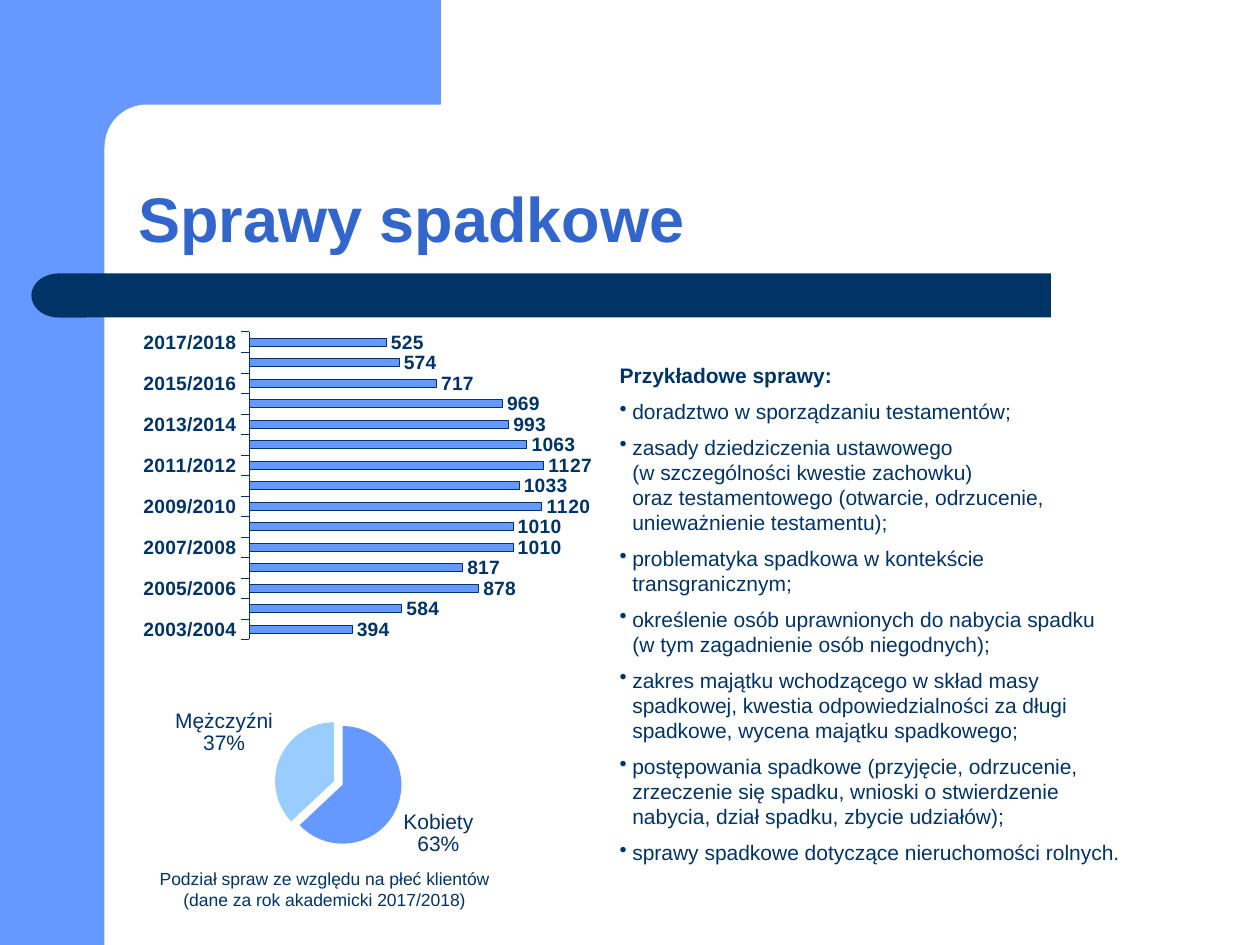
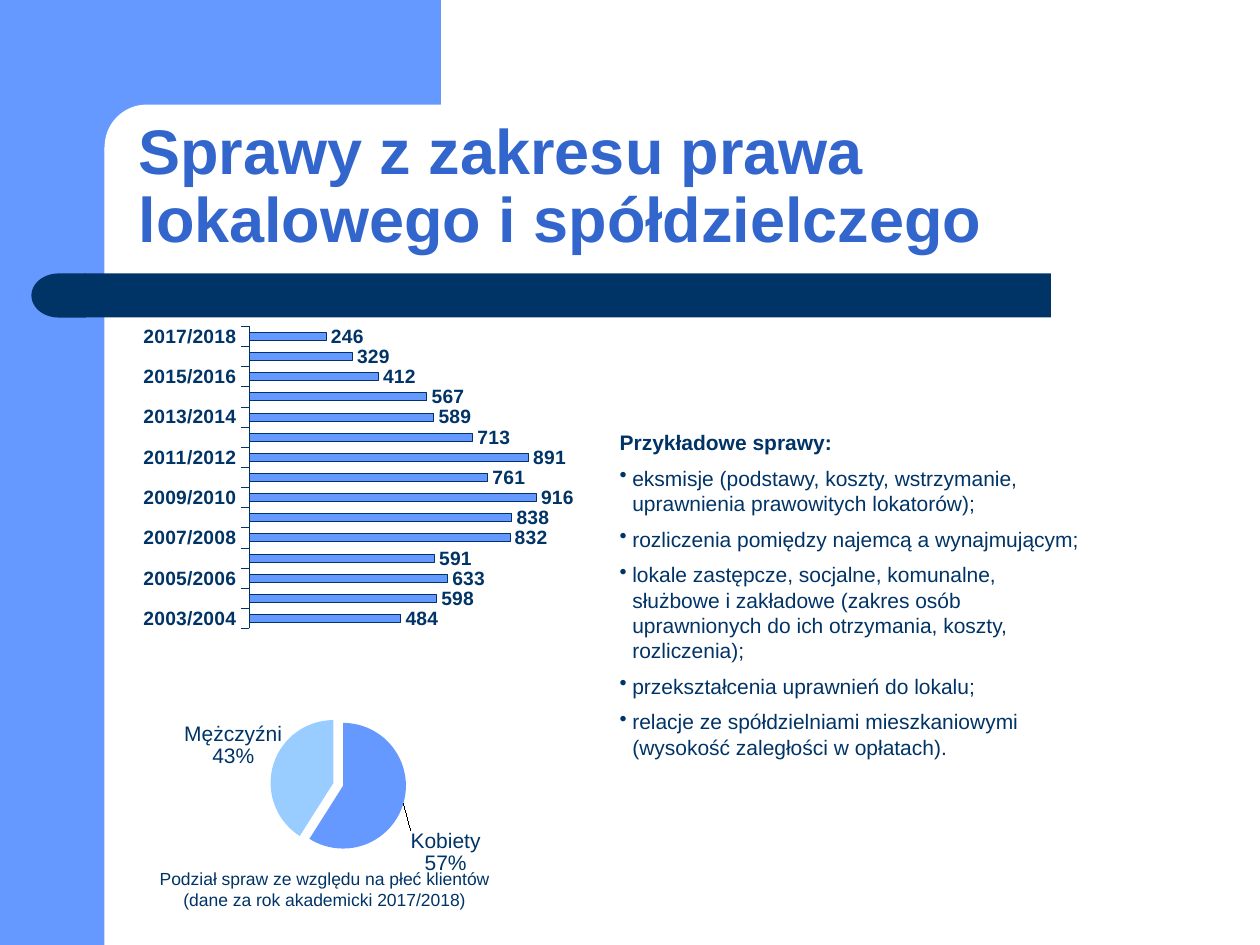
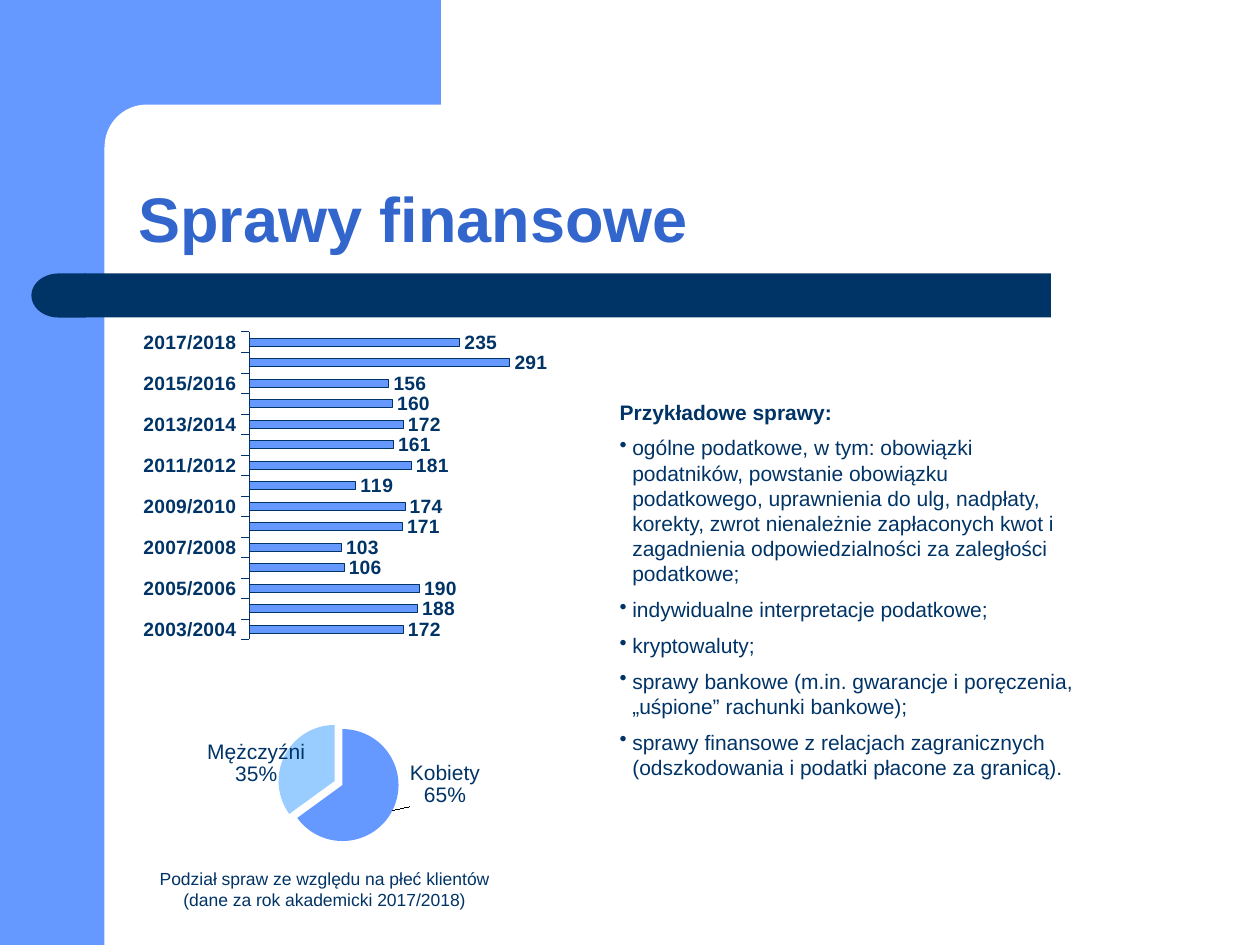
from lxml import etree
from pptx import Presentation
from pptx.chart.data import CategoryChartData
from pptx.dml.color import RGBColor
from pptx.enum.chart import XL_CHART_TYPE, XL_LABEL_POSITION, XL_TICK_MARK
from pptx.enum.shapes import MSO_SHAPE
from pptx.enum.text import MSO_ANCHOR, MSO_AUTO_SIZE, PP_ALIGN
from pptx.oxml import parse_xml
from pptx.oxml.ns import nsdecls, qn
from pptx.util import Pt

# Style
PX = 9144  # EMU per px, 100 px to the inch
FONT = "Arial"
NAVY = RGBColor(0x00, 0x33, 0x66)
BLUE = RGBColor(0x66, 0x99, 0xFF)
SKY = RGBColor(0x99, 0xCC, 0xFF)
TITLE = RGBColor(0x33, 0x66, 0xCC)
WHITE = RGBColor(0xFF, 0xFF, 0xFF)

RECT = MSO_SHAPE.RECTANGLE
ROUND = MSO_SHAPE.ROUNDED_RECTANGLE
DELAY = MSO_SHAPE.FLOWCHART_DELAY
BAR = XL_CHART_TYPE.BAR_CLUSTERED
PIE = XL_CHART_TYPE.PIE
OUT_END = XL_LABEL_POSITION.OUTSIDE_END
TICK_OUT = XL_TICK_MARK.OUTSIDE
LEFT, CENTER = PP_ALIGN.LEFT, PP_ALIGN.CENTER
BOTTOM = MSO_ANCHOR.BOTTOM
GROW, FIXED = MSO_AUTO_SIZE.SHAPE_TO_FIT_TEXT, MSO_AUTO_SIZE.NONE

# Shared wording and chart settings
YEARS = [f"{y}/{y + 1}" for y in range(2003, 2018)]
SEXES = ["Kobiety", "Mężczyźni"]
HEADING = "Przykładowe sprawy:"
CAPTION = "Podział spraw ze względu na płeć klientów (dane za rok akademicki 2017/2018)"
BAR_PLOT = (0.283, 0.078, 0.575, 0.857)
PIE_W, PIE_H = 433, 165

# labels: slice label texts that differ from the data; shifts: label offsets
TOPICS = [
    dict(
        title="Sprawy spadkowe",
        cases=[394, 584, 878, 817, 1010, 1010, 1120, 1033, 1127, 1063, 993, 969, 717, 574, 525],
        axis_max=1200, bars_at=(75, 241, 433, 285),
        shares=[63, 37], pie_top=539, pie_size=101, labels=None, shifts=None,
        text_at=(482, 283, 428, 424),
        examples=[
            "doradztwo w sporządzaniu testamentów;",
            "zasady dziedziczenia ustawowego \n(w szczególności kwestie zachowku) \n"
            "oraz testamentowego (otwarcie, odrzucenie, unieważnienie testamentu);",
            "problematyka spadkowa w kontekście transgranicznym;",
            "określenie osób uprawnionych do nabycia spadku \n(w tym zagadnienie osób niegodnych);",
            "zakres majątku wchodzącego w skład masy spadkowej, kwestia odpowiedzialności "
            "za długi spadkowe, wycena majątku spadkowego;",
            "postępowania spadkowe (przyjęcie, odrzucenie, zrzeczenie się spadku, wnioski "
            "o stwierdzenie nabycia, dział spadku, zbycie udziałów);",
            "sprawy spadkowe dotyczące nieruchomości rolnych.",
        ],
    ),
    dict(
        title="Sprawy z zakresu prawa lokalowego i spółdzielczego",
        cases=[484, 598, 633, 591, 832, 838, 916, 761, 891, 713, 589, 567, 412, 329, 246],
        axis_max=1000, bars_at=(75, 237, 433, 280),
        shares=[59, 41], pie_top=540, pie_size=108,
        labels=["57%", "43%"], shifts=[(0, 0.12), (0.03, 0.02)],
        text_at=(482, 336, 388, 283),
        examples=[
            "eksmisje (podstawy, koszty, wstrzymanie, uprawnienia prawowitych lokatorów);",
            "rozliczenia pomiędzy najemcą a wynajmującym;",
            "lokale zastępcze, socjalne, komunalne, służbowe i zakładowe (zakres osób "
            "uprawnionych do ich otrzymania, koszty, rozliczenia);",
            "przekształcenia uprawnień do lokalu;",
            "relacje ze spółdzielniami mieszkaniowymi (wysokość zaległości w opłatach).",
        ],
    ),
    dict(
        title="Sprawy finansowe",
        cases=[172, 188, 190, 106, 103, 171, 174, 119, 181, 161, 172, 160, 156, 291, 235],
        axis_max=350, bars_at=(75, 241, 433, 285),
        shares=[65, 35], pie_top=539, pie_size=96,
        labels=None, shifts=[(0.02, -0.25), (0.05, 0.16)],
        text_at=(482, 312, 388, 333),
        examples=[
            "ogólne podatkowe, w tym: obowiązki podatników, powstanie obowiązku podatkowego, "
            "uprawnienia do ulg, nadpłaty, korekty, zwrot nienależnie zapłaconych kwot "
            "i zagadnienia odpowiedzialności za zaległości podatkowe;",
            "indywidualne interpretacje podatkowe;",
            "kryptowaluty;",
            "sprawy bankowe (m.in. gwarancje i poręczenia, „uśpione” rachunki bankowe);",
            "sprawy finansowe z relacjach zagranicznych (odszkodowania i podatki płacone za granicą).",
        ],
    ),
]


def emu(box):
    return [v * PX for v in box]


def set_font(font, size, color=NAVY, bold=False):
    font.name, font.size, font.bold = FONT, Pt(size), bold
    font.color.rgb = color


def manual_layout(x, y, w=None, h=None):
    """Chart layout: a plot box when w and h are given, else a label offset."""
    fields = [("x", x), ("y", y)]
    if w is not None:
        fields = [("layoutTarget", "inner"), ("xMode", "edge"), ("yMode", "edge"),
                  *fields, ("w", w), ("h", h)]
    body = "".join(f'<c:{name} val="{value}"/>' for name, value in fields)
    return parse_xml(f'<c:layout {nsdecls("c")}><c:manualLayout>{body}</c:manualLayout></c:layout>')


class Deck:
    def __init__(self):
        self.prs = Presentation()
        self.prs.slide_width, self.prs.slide_height = 1000 * PX, 750 * PX
        self.layout = self.prs.slide_layouts[5]
        self.s = None

    def new_slide(self, title):
        self.s = self.prs.slides.add_slide(self.layout)
        sp = self.s.shapes.title
        sp.left, sp.top, sp.width, sp.height = emu((100, 83, 875, 125))
        tf = sp.text_frame
        tf.word_wrap, tf.auto_size, tf.vertical_anchor = True, FIXED, BOTTOM
        p = tf.paragraphs[0]
        p.alignment, p.line_spacing = LEFT, 0.9
        self.run(p, title, 36, TITLE, True)

    def run(self, p, text, size, color=NAVY, bold=False):
        for i, line in enumerate(text.split("\n")):
            if i:
                p.add_line_break()
            r = p.add_run()
            r.text = line
            set_font(r.font, size, color, bold)

    def layout_shape(self, kind, box, color, adj=None, flip=False):
        """Draw a shape and hand it to the layout that all slides share."""
        sp = self.s.shapes.add_shape(kind, *emu(box))
        sp.shadow.inherit = False
        sp.fill.solid()
        sp.fill.fore_color.rgb = color
        sp.line.fill.background()
        if adj is not None:
            sp.adjustments[0] = adj
        if flip:
            sp.element.xpath(".//a:xfrm")[0].set("flipH", "1")
        self.layout.shapes.element.append(sp.element)

    def text_box(self, box):
        tf = self.s.shapes.add_textbox(*emu(box)).text_frame
        tf.word_wrap, tf.auto_size = True, GROW
        return tf

    def bullet(self, tf, text):
        p = tf.add_paragraph()
        p.space_before = Pt(6)
        pPr = p._p.get_or_add_pPr()
        pPr.set("marL", str(10 * PX))
        pPr.set("indent", str(-10 * PX))
        etree.SubElement(pPr, qn("a:buChar")).set("char", "•")
        self.run(p, text, 12)

    def chart(self, kind, box, cats, values, plot_box):
        data = CategoryChartData()
        data.categories = cats
        data.add_series("Series 1", values)
        chart = self.s.shapes.add_chart(kind, *emu(box), data).chart
        chart.has_title = chart.has_legend = False
        set_font(chart.font, 12)
        for old in chart.element.xpath(".//c:plotArea/c:layout"):
            old.getparent().remove(old)
        chart.element.xpath(".//c:plotArea")[0].insert(0, manual_layout(*plot_box))
        chart.element.xpath("./c:chart")[0].addnext(parse_xml(
            f'<c:spPr {nsdecls("c", "a")}><a:noFill/><a:ln><a:noFill/></a:ln></c:spPr>'))
        return chart

    def bars(self, box, values, axis_max):
        chart = self.chart(BAR, box, YEARS, values, BAR_PLOT)
        axis = chart.value_axis
        axis.visible = axis.has_major_gridlines = False
        axis.minimum_scale, axis.maximum_scale = 0, axis_max
        axis = chart.category_axis
        axis.major_tick_mark = TICK_OUT
        axis.format.line.color.rgb = NAVY
        axis.format.line.width = Pt(0.15)
        set_font(axis.tick_labels.font, 11, bold=True)
        plot = chart.plots[0]
        plot.gap_width, plot.vary_by_categories = 150, False
        series = plot.series[0]
        series.format.fill.solid()
        series.format.fill.fore_color.rgb = BLUE
        series.format.line.color.rgb = NAVY
        series.format.line.width = Pt(0.25)
        labels = series.data_labels
        labels.show_value, labels.position = True, OUT_END
        set_font(labels.font, 11, bold=True)

    def pie(self, top, shares, size, texts, shifts):
        w, h = size / PIE_W, size / PIE_H
        plot_box = [round(v, 3) for v in (0.526 - w / 2, 0.5 - h / 2, w, h)]
        chart = self.chart(PIE, (41, top, PIE_W, PIE_H), SEXES, shares, plot_box)
        chart.plots[0].vary_by_categories = True
        series = chart.plots[0].series[0]
        labels = series.data_labels
        labels.show_value = False
        labels.show_category_name = labels.show_percentage = True
        labels.position = OUT_END
        set_font(labels.font, 12)
        for i, color in enumerate((BLUE, SKY)):
            point = series.points[i]
            point.format.fill.solid()
            point.format.fill.fore_color.rgb = color
            if texts:
                tf = point.data_label.text_frame
                self.run(tf.paragraphs[0], SEXES[i], 12)
                self.run(tf.add_paragraph(), texts[i], 12)
            elif shifts:
                set_font(point.data_label.font, 12)
            if shifts:
                point.data_label.position = OUT_END
                label = chart.element.xpath(f".//c:dLbl[c:idx/@val='{i}']")[0]
                label.insert(1, manual_layout(*shifts[i]))
                for tag, on in (("showVal", "0"), ("showCatName", "1"), ("showPercent", "1")):
                    label.find(qn(f"c:{tag}")).set("val", on)
        # Name and share on separate lines, slices pulled apart
        for flag in chart.element.xpath(".//c:showBubbleSize"):
            flag.addnext(parse_xml(f'<c:separator {nsdecls("c")}>\n</c:separator>'))
        chart.element.xpath(".//c:dPt")[0].addprevious(
            parse_xml(f'<c:explosion {nsdecls("c")} val="8"/>'))


def main():
    deck = Deck()
    for i, topic in enumerate(TOPICS):
        deck.new_slide(topic["title"])

        # Side panel, corner and title band, shared through the layout
        if i == 0:
            deck.layout_shape(RECT, (0, 0, 83, 750), BLUE)
            deck.layout_shape(RECT, (75, 0, 275, 117), BLUE)
            deck.layout_shape(ROUND, (83, 83, 558, 67), WHITE, adj=0.5)
            deck.layout_shape(RECT, (67, 217, 767, 35), NAVY)
            deck.layout_shape(DELAY, (25, 217, 43, 35), NAVY, flip=True)

        # Examples
        tf = deck.text_box(topic["text_at"])
        deck.run(tf.paragraphs[0], HEADING, 12, bold=True)
        for example in topic["examples"]:
            deck.bullet(tf, example)

        # Charts and caption
        deck.bars(topic["bars_at"], topic["cases"], topic["axis_max"])
        deck.pie(topic["pie_top"], topic["shares"], topic["pie_size"],
                 topic["labels"], topic["shifts"])
        p = deck.text_box((106, 684, 303, 43)).paragraphs[0]
        p.alignment = CENTER
        deck.run(p, CAPTION, 10)

    deck.prs.save("out.pptx")


if __name__ == "__main__":
    main()
